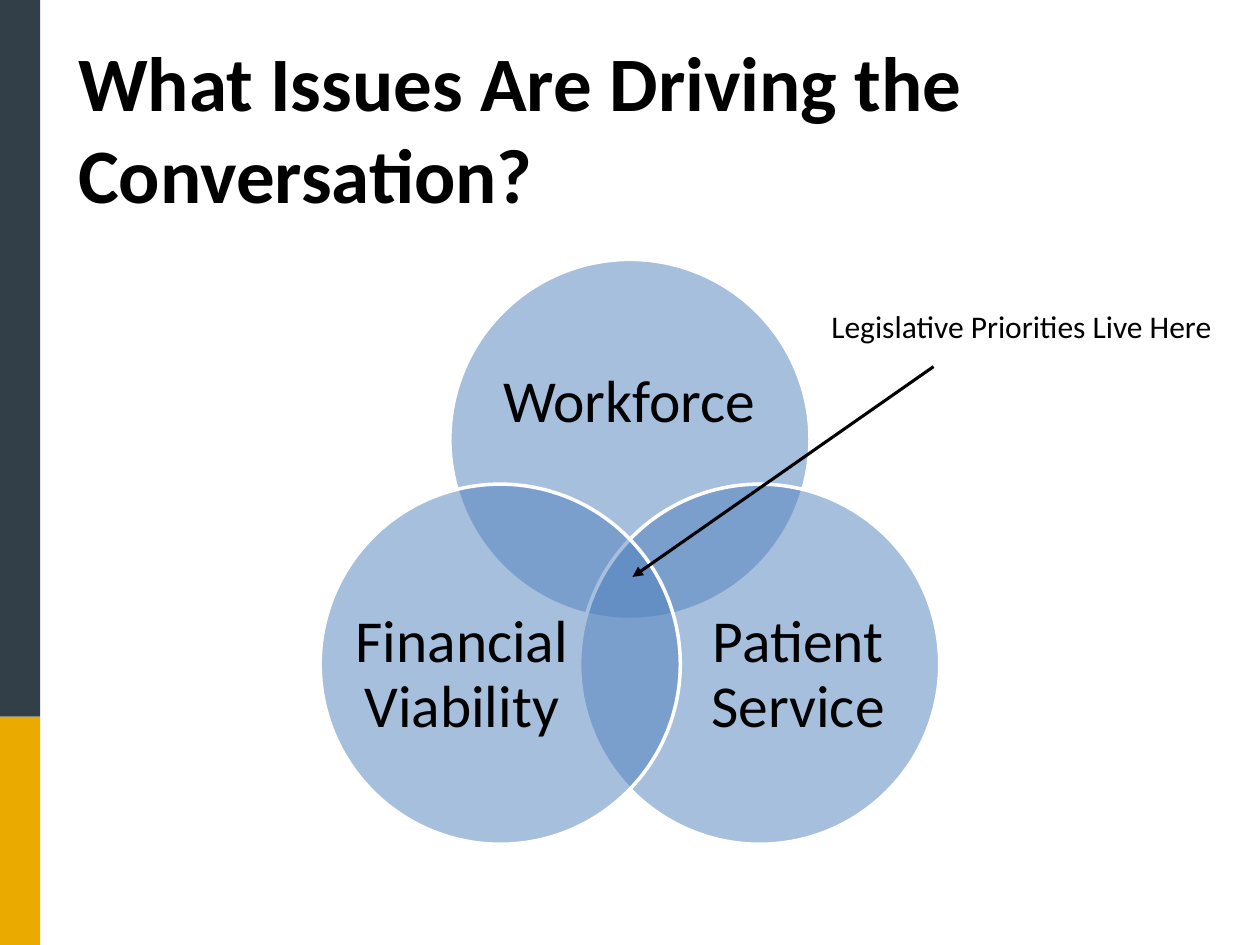
"""Build a slide with a three-circle Venn diagram of the issues driving the conversation."""
from math import cos, radians, sin

from lxml import etree
from pptx import Presentation
from pptx.dml.color import RGBColor
from pptx.enum.shapes import MSO_CONNECTOR, MSO_SHAPE
from pptx.enum.text import MSO_ANCHOR, MSO_AUTO_SIZE, PP_ALIGN
from pptx.oxml.ns import qn
from pptx.util import Cm, Pt

RECT, OVAL = MSO_SHAPE.RECTANGLE, MSO_SHAPE.OVAL
STRAIGHT = MSO_CONNECTOR.STRAIGHT
TOP, MIDDLE = MSO_ANCHOR.TOP, MSO_ANCHOR.MIDDLE
LEFT, CENTER = PP_ALIGN.LEFT, PP_ALIGN.CENTER
FIXED = MSO_AUTO_SIZE.NONE

FONT = "Calibri"
COLORS = {"slate": "333F48", "gold": "EAAA00", "circle": "4F81BD",
          "outline": "FFFFFF", "text": "000000"}
VENN_X, VENN_Y, VENN_OFFSET, DIAMETER = 12.7, 11.88, 3.02, 7.26
CIRCLES = [
    (-90, "Workforce", (10.03, 6.5, 5.31, 3.25)),
    (30, "Patient Service", (13.92, 11.63, 4.34, 3.99)),
    (150, "Financial Viability", (7.14, 11.63, 4.34, 3.99)),
]


def rgb(name):
    """Return the named colour."""
    return RGBColor.from_string(COLORS[name])


def lengths(box):
    """Convert a box in centimetres to lengths."""
    return [Cm(v) for v in box]


def style(p, size, align=LEFT, bold=False):
    """Format a whole paragraph."""
    p.alignment = align
    p.font.name, p.font.size, p.font.bold = FONT, Pt(size), bold
    p.font.color.rgb = rgb("text")


def add_title(s, text, box):
    """Fill and place the title placeholder."""
    sp = s.shapes.title
    sp.left, sp.top, sp.width, sp.height = lengths(box)
    tf = sp.text_frame
    tf.text = text
    tf.auto_size, tf.vertical_anchor = FIXED, TOP
    style(tf.paragraphs[0], 44, bold=True)


def add_shape(shapes, kind, box, color):
    """Add a filled shape without outline or shadow."""
    sp = shapes.add_shape(kind, *lengths(box))
    sp.shadow.inherit = False
    sp.fill.solid()
    sp.fill.fore_color.rgb = rgb(color)
    sp.line.fill.background()
    return sp


def add_circle(shapes, angle):
    """Add a half-transparent circle at an angle around the Venn centre."""
    x = VENN_X + VENN_OFFSET * cos(radians(angle)) - DIAMETER / 2
    y = VENN_Y + VENN_OFFSET * sin(radians(angle)) - DIAMETER / 2
    sp = add_shape(shapes, OVAL, (x, y, DIAMETER, DIAMETER), "circle")
    color = sp._element.spPr.find(qn("a:solidFill")).find(qn("a:srgbClr"))
    etree.SubElement(color, qn("a:alpha"), val="50000")
    sp.line.color.rgb = rgb("outline")
    sp.line.width = Pt(2)


def add_label(shapes, text, box):
    """Add a centred circle label."""
    tf = shapes.add_textbox(*lengths(box)).text_frame
    tf.word_wrap, tf.vertical_anchor = True, MIDDLE
    tf.margin_left = tf.margin_right = tf.margin_top = tf.margin_bottom = 0
    tf.text = text
    p = tf.paragraphs[0]
    p.line_spacing = 0.9
    style(p, 34, CENTER)


def add_arrow(s, x1, y1, x2, y2):
    """Add a line with an arrowhead at its end."""
    line = s.shapes.add_connector(STRAIGHT, *lengths((x1, y1, x2, y2)))
    line.line.color.rgb = rgb("text")
    line.line.width = Pt(1.75)
    etree.SubElement(line.line._get_or_add_ln(), qn("a:tailEnd"), type="triangle")
    etree.SubElement(line._element.spPr, qn("a:effectLst"))


def add_note(s, text, box):
    """Add the callout text."""
    tf = s.shapes.add_textbox(*lengths(box)).text_frame
    tf.word_wrap = True
    tf.text = text
    style(tf.paragraphs[0], 18)


def main():
    """Build and save the slide."""
    prs = Presentation()
    prs.slide_width, prs.slide_height = Cm(25.4), Cm(19.05)
    s = prs.slides.add_slide(prs.slide_layouts[5])
    add_shape(s.shapes, RECT, (0, 0, 0.81, 14.45), "slate")
    add_shape(s.shapes, RECT, (0, 14.45, 0.81, 4.6), "gold")
    add_title(s, "What Issues Are Driving the Conversation?", (1.32, 0.56, 22.86, 3.18))
    venn = s.shapes.add_group_shape()
    for angle, text, box in CIRCLES:
        add_circle(venn.shapes, angle)
        add_label(venn.shapes, text, box)
    add_arrow(s, 18.82, 7.39, 12.75, 11.63)
    add_note(s, "Legislative Priorities Live Here", (16.51, 6.07, 8.48, 1.02))
    prs.save("out.pptx")


if __name__ == "__main__":
    main()
